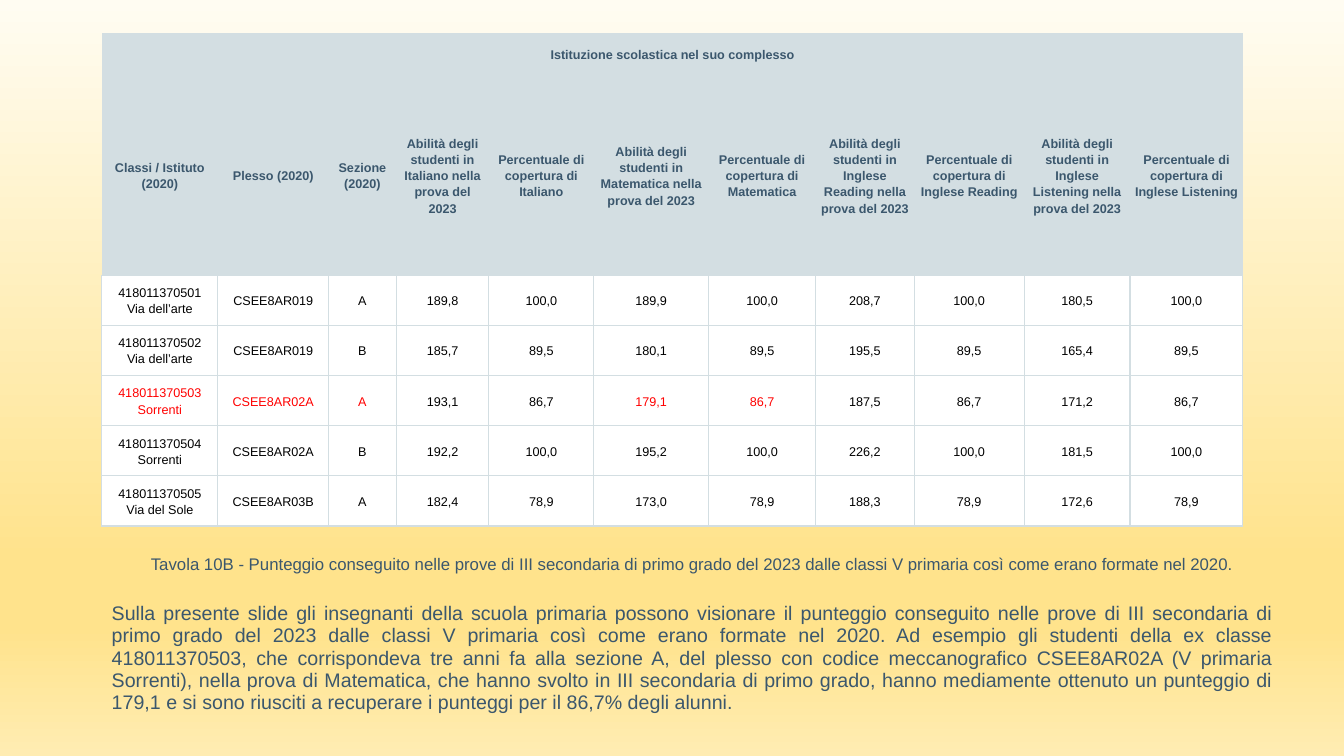
from dataclasses import dataclass

from lxml.etree import SubElement
from pptx import Presentation
from pptx.dml.color import RGBColor
from pptx.enum.text import MSO_ANCHOR, PP_ALIGN
from pptx.oxml.ns import qn
from pptx.util import Inches, Pt


@dataclass(frozen=True)
class Theme:
    """Colours, font and type sizes of the slide."""
    font: str = "Arial"
    ink: str = "3B576D"
    black: str = "000000"
    red: str = "FF0000"
    header: str = "D3DEE2"
    white: str = "FFFFFF"
    table_size: int = 9
    caption_size: int = 12
    body_size: int = 14
    backdrop: tuple = ((0, "FFFCF2"), (74, "FFE38C"), (83, "FFE38C"), (100, "FFECB2"))


T = Theme()
W, H = Inches(13.33), Inches(7.5)
NO_STYLE = "{2D5ABB26-0587-4C30-8999-92F81FD0307C}"
TABLE_BOX = (7.58, 4.4, 84.92, 65.2)
TEXT_BOX = (7.58, 72.8, 87.92, 24.13)
COLS = (1.15, 1.1, 0.67, 0.92, 1.04, 1.14, 1.06, 0.98, 1.09, 1.05, 1.12)
ROWS = (0.42, 1.99, 0.5, 0.5, 0.5, 0.5, 0.5)
TITLE = "Istituzione scolastica nel suo complesso"
SUBJECTS = ("Italiano", "Matematica", "Inglese Reading", "Inglese Listening")
HEADINGS = ["Classi / Istituto (2020)", "Plesso (2020)", "Sezione (2020)"] + [
    heading for subject in SUBJECTS for heading in (
        f"Abilità degli studenti in {subject} nella prova del 2023",
        f"Percentuale di copertura di {subject}")]
CLASSES = (
    ("418011370501\nVia dell’arte", "CSEE8AR019", "A", "100,0", ("189,8", "189,9", "208,7", "180,5")),
    ("418011370502\nVia dell’arte", "CSEE8AR019", "B", "89,5", ("185,7", "180,1", "195,5", "165,4")),
    ("418011370503\nSorrenti", "CSEE8AR02A", "A", "86,7", ("193,1", "179,1", "187,5", "171,2")),
    ("418011370504\nSorrenti", "CSEE8AR02A", "B", "100,0", ("192,2", "195,2", "226,2", "181,5")),
    ("418011370505\nVia del Sole", "CSEE8AR03B", "A", "78,9", ("182,4", "173,0", "188,3", "172,6")),
)
RED_CLASS, RED_COLS = 2, (0, 1, 2, 5, 6)
CAPTION = ("Tavola 10B - Punteggio conseguito nelle prove di III secondaria di primo grado "
           "del 2023 dalle classi V primaria così come erano formate nel 2020.")
BODY = ("Sulla presente slide gli insegnanti della scuola primaria possono visionare il "
        "punteggio conseguito nelle prove di III secondaria di primo grado del 2023 dalle "
        "classi V primaria così come erano formate nel 2020. Ad esempio gli studenti della "
        "ex classe 418011370503, che corrispondeva tre anni fa alla sezione A, del plesso "
        "con codice meccanografico CSEE8AR02A (V primaria Sorrenti), nella prova di "
        "Matematica, che hanno svolto in III secondaria di primo grado, hanno mediamente "
        "ottenuto un punteggio di 179,1 e si sono riusciti a recuperare i punteggi per il "
        "86,7% degli alunni.")


def place(left, top, width, height):
    """Turn percentages of the slide into lengths."""
    return tuple(int(side * pct / 100) for side, pct in zip((W, H, W, H), (left, top, width, height)))


def write(p, text, size=T.table_size, color=T.ink, bold=False, align=PP_ALIGN.CENTER,
          spacing=1.15, before=0, after=0):
    """Write formatted text into a paragraph."""
    p.alignment, p.line_spacing = align, spacing
    p.space_before, p.space_after = Pt(before), Pt(after)
    r = p.add_run()
    r.text = text
    r.font.name, r.font.size, r.font.bold = T.font, Pt(size), bold
    r.font.color.rgb = RGBColor.from_string(color)


def add_color(parent, color):
    """Add a plain colour element."""
    SubElement(parent, qn("a:srgbClr"), val=color)


def paint_background(s):
    """Fill the slide with the vertical gradient."""
    fill = s.background.fill
    fill.gradient()
    fill.gradient_angle = 270
    stops = s.background._cSld.find(".//" + qn("a:gsLst"))
    stops.clear()
    for pos, color in T.backdrop:
        add_color(SubElement(stops, qn("a:gs"), pos=str(pos * 1000)), color)


def set_borders(cell, edges):
    """Draw one-point lines on the given cell edges."""
    tcPr = cell._tc.get_or_add_tcPr()
    for i, edge in enumerate(edges):
        ln = SubElement(tcPr, qn("a:ln" + edge), w=str(Pt(1)))
        add_color(SubElement(ln, qn("a:solidFill")), T.header)
        tcPr.insert(i, ln)


def fill_cell(cell, text, fill, inset, edges, **fmt):
    """Fill, frame and write one table cell."""
    cell.fill.solid()
    cell.fill.fore_color.rgb = RGBColor.from_string(fill)
    cell.vertical_anchor = MSO_ANCHOR.MIDDLE
    cell.margin_left = cell.margin_right = cell.margin_top = cell.margin_bottom = Inches(inset)
    set_borders(cell, edges)
    tf = cell.text_frame
    for i, line in enumerate(text.split("\n")):
        write(tf.add_paragraph() if i else tf.paragraphs[0], line, **fmt)


def add_scores(s):
    """Add the table of class scores."""
    left, top, width, height = place(*TABLE_BOX)
    tbl = s.shapes.add_table(len(ROWS), len(COLS), left, top, width, height).table
    tbl._tbl.tblPr.find(qn("a:tableStyleId")).text = NO_STYLE
    tbl.first_row = tbl.horz_banding = False
    for col, share in zip(tbl.columns, COLS):
        col.width = int(width * share / sum(COLS))
    for row, share in zip(tbl.rows, ROWS):
        row.height = int(height * share / sum(ROWS))
    tbl.cell(0, 0).merge(tbl.cell(0, len(COLS) - 1))
    fill_cell(tbl.cell(0, 0), TITLE, T.header, 0.03, "", bold=True)
    for c, heading in enumerate(HEADINGS):
        fill_cell(tbl.cell(1, c), heading, T.header, 0.03, "B", bold=True)
    for i, (name, school, section, coverage, scores) in enumerate(CLASSES):
        values = [name, school, section] + [v for score in scores for v in (score, coverage)]
        for c, value in enumerate(values):
            color = T.red if i == RED_CLASS and c in RED_COLS else T.black
            fill_cell(tbl.cell(i + 2, c), value, T.white, 0.05, "LRTB", color=color)


def add_comment(s):
    """Add the caption and the explanation below the table."""
    tf = s.shapes.add_textbox(*place(*TEXT_BOX)).text_frame
    tf.word_wrap = True
    write(tf.paragraphs[0], CAPTION, size=T.caption_size, spacing=0.95, after=10)
    write(tf.add_paragraph(), BODY, size=T.body_size, spacing=0.95, before=10,
          align=PP_ALIGN.JUSTIFY)


def main():
    """Build and save the slide."""
    prs = Presentation()
    prs.slide_width, prs.slide_height = W, H
    s = prs.slides.add_slide(prs.slide_layouts[6])
    paint_background(s)
    add_comment(s)
    add_scores(s)
    prs.save("out.pptx")


if __name__ == "__main__":
    main()
